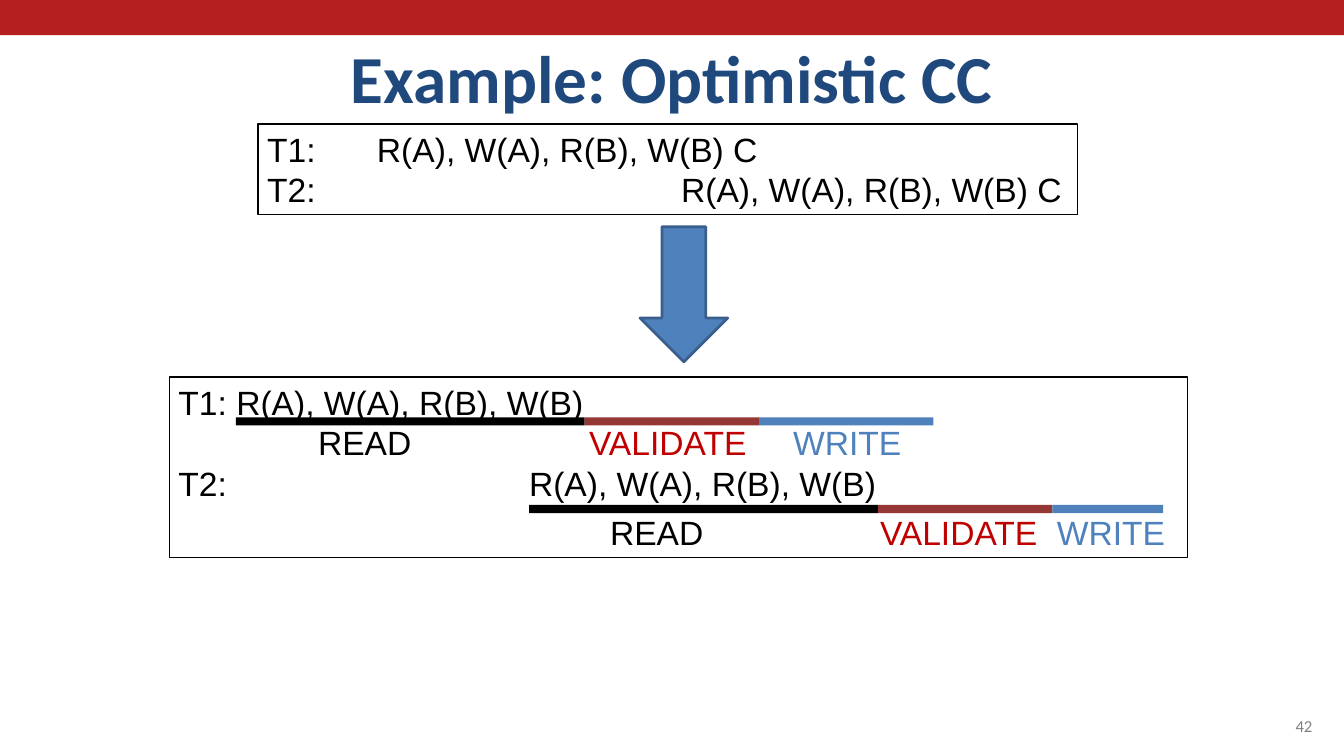
from pptx import Presentation
from pptx.dml.color import RGBColor
from pptx.enum.shapes import MSO_SHAPE
from pptx.enum.text import MSO_ANCHOR, MSO_AUTO_SIZE, PP_ALIGN
from pptx.oxml.ns import qn
from pptx.util import Pt
from lxml.etree import SubElement

BLACK, BLUE, RED, MAROON = "000000", "4F81BD", "C00000", "953735"


def color(code):
    return RGBColor.from_string(code)


class Deck:
    title_font = {"name": "Calibri", "size": Pt(48), "bold": True}
    body_font = {"name": "Arial", "size": Pt(24)}
    page_font = {"name": "Calibri", "size": Pt(12)}

    def __init__(self, wide, high):
        self.prs = Presentation()
        self.prs.slide_width, self.prs.slide_height = Pt(wide), Pt(high)
        self.slide = self.prs.slides.add_slide(self.prs.slide_layouts[5])

    def style(self, font, look, code):
        for key, value in look.items():
            setattr(font, key, value)
        font.color.rgb = color(code)

    def frame(self, shape, **look):
        for key, value in look.items():
            setattr(shape.text_frame, key, value)
        return shape.text_frame

    def label(self, para, parts, look, align=PP_ALIGN.LEFT):
        para.alignment = align
        for text, code in parts:
            run = para.add_run()
            run.text = text
            self.style(run.font, look, code)

    def title(self, text, at):
        shape = self.slide.shapes.title
        shape.left, shape.top, shape.width, shape.height = map(Pt, at)
        frame = self.frame(shape, vertical_anchor=MSO_ANCHOR.BOTTOM, word_wrap=True,
                           auto_size=MSO_AUTO_SIZE.NONE, margin_left=0, margin_right=0)
        self.label(frame.paragraphs[0], [(text, "1F497D")], self.title_font, PP_ALIGN.CENTER)

    def shape(self, at, fill=None, line=None, width=1, kind=MSO_SHAPE.RECTANGLE):
        shape = self.slide.shapes.add_shape(kind, *map(Pt, at))
        shape.shadow.inherit = False
        if fill:
            shape.fill.solid()
            shape.fill.fore_color.rgb = color(fill)
        else:
            shape.fill.background()
        if line:
            shape.line.color.rgb = color(line)
            shape.line.width = Pt(width)
        else:
            shape.line.fill.background()
        return shape

    def box(self, at, rows, wrap):
        """Each row is (tab stops, space before, parts)."""
        frame = self.frame(self.shape(at, line=BLACK), word_wrap=wrap,
                           vertical_anchor=MSO_ANCHOR.TOP, margin_left=Pt(6.5),
                           margin_right=Pt(6.5), margin_top=Pt(3.2), margin_bottom=Pt(3.2))
        for i, (stops, gap, parts) in enumerate(rows):
            para = frame.add_paragraph() if i else frame.paragraphs[0]
            para.line_spacing = Pt(29)
            if gap:
                para.space_before = Pt(gap)
            if stops:
                tabs = SubElement(para._p.get_or_add_pPr(), qn("a:tabLst"))
                for stop in stops:
                    SubElement(tabs, qn("a:tab"), pos=str(Pt(stop)), algn="l")
            self.label(para, parts, self.body_font)

    def phases(self, left, top, widths):
        for wide, code in zip(widths, (BLACK, MAROON, BLUE)):
            self.shape((left, top, wide, 5.8), code)
            left += wide

    def page(self, text, at):
        shape = self.slide.shapes.add_textbox(*map(Pt, at))
        frame = self.frame(shape, word_wrap=True, vertical_anchor=MSO_ANCHOR.BOTTOM)
        self.label(frame.paragraphs[0], [(text, "808080")], self.page_font, PP_ALIGN.RIGHT)


def main():
    deck = Deck(960, 540)

    # Banner and title
    deck.shape((0, 0, 960, 25.2), "B51F1F")
    deck.title("Example: Optimistic CC", (0, 19.4, 960, 67.7))

    # Serial schedule
    work = "R(A), W(A), R(B), W(B)"
    deck.box((184.3, 88.6, 585.4, 64.8), [
        ([78.5], 0, [(f"T1:\t{work} C", BLACK)]),
        ([295.7], 0, [(f"T2:\t{work} C", BLACK)]),
    ], False)
    deck.shape((457.2, 162, 62.6, 96.5), BLUE, "3A5F8C", 2, MSO_SHAPE.DOWN_ARROW)

    # Optimistic schedule
    names = [("\tREAD", BLACK), ("\tVALIDATE", RED), ("\tWRITE", BLUE)]
    deck.box((121, 269.3, 727.2, 128.9), [
        ([], 0, [(f"T1: {work}", BLACK)]),
        ([99.7, 293.3, 439], 0, names),
        ([250.4], 0, [(f"T2:\t{work}", BLACK)]),
        ([308.3, 501.1, 627.5], 5.8, names),
    ], True)

    # Phase bars
    deck.phases(168.5, 298.1, (249.1, 124.6, 124.6))
    deck.phases(378, 360.7, (249.1, 124.6, 79.2))

    # Page number
    deck.page("42", (688.3, 491.8, 256.3, 37.4))
    deck.prs.save("out.pptx")


if __name__ == "__main__":
    main()
